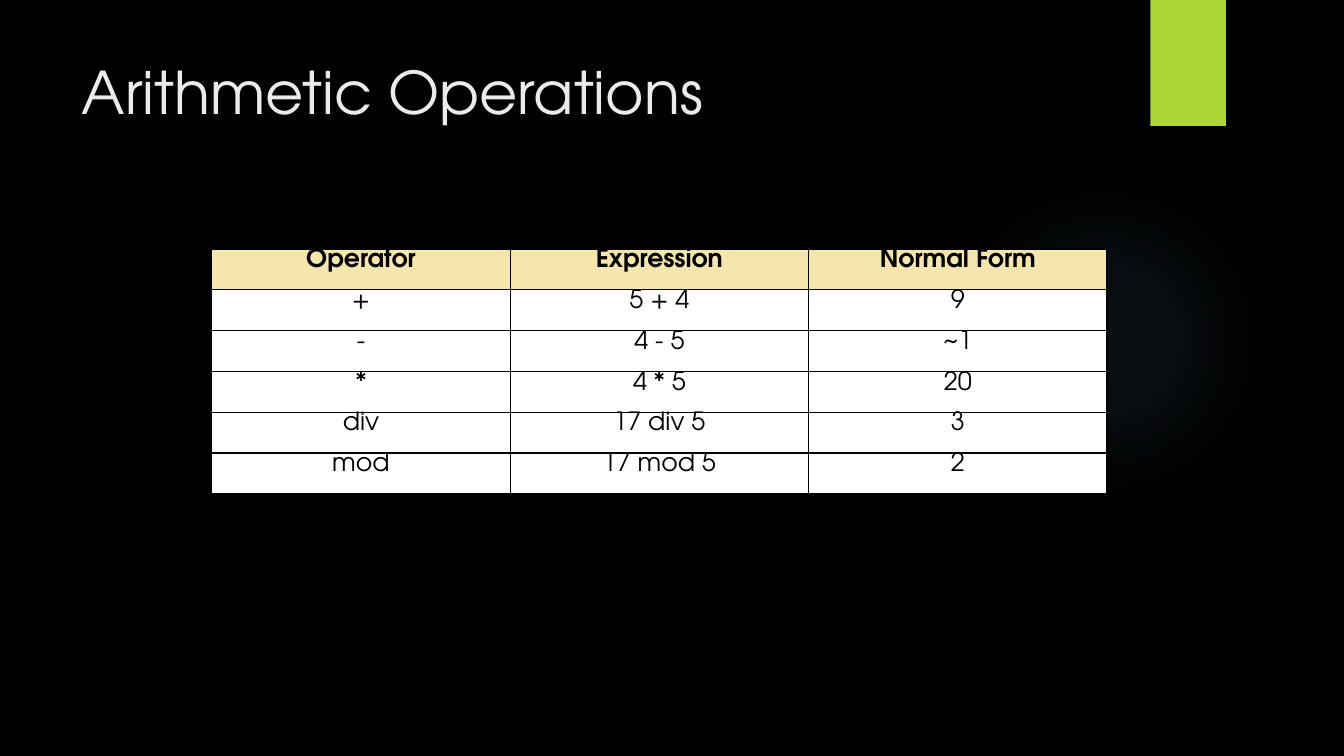
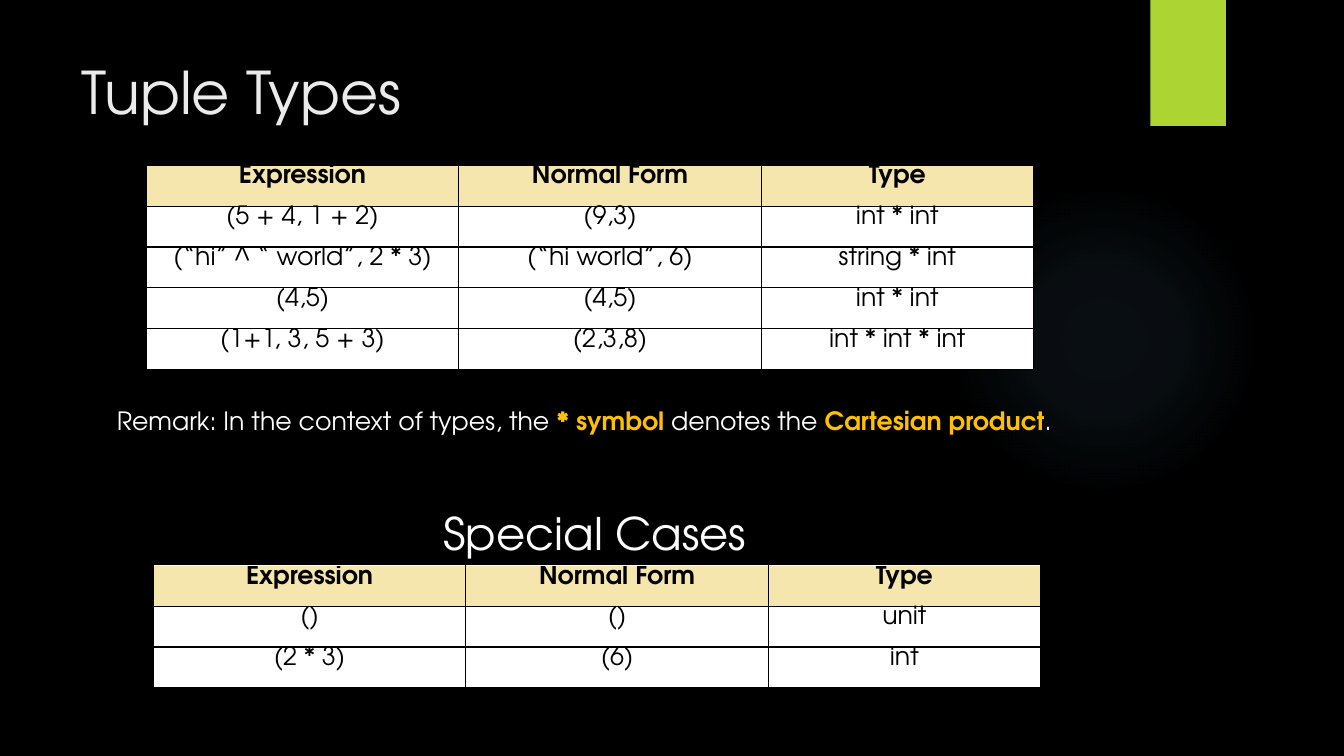
from dataclasses import dataclass

from lxml.etree import SubElement
from pptx import Presentation
from pptx.dml.color import RGBColor
from pptx.enum.shapes import MSO_SHAPE
from pptx.enum.text import MSO_ANCHOR, MSO_AUTO_SIZE, PP_ALIGN
from pptx.oxml import parse_xml
from pptx.oxml.ns import nsdecls, qn
from pptx.presentation import Presentation as Deck
from pptx.slide import Slide, SlideMaster
from pptx.table import _Cell
from pptx.text.text import _Paragraph
from pptx.util import Inches, Pt


@dataclass(frozen=True)
class Theme:
    font: str = "TeX Gyre Adventor"
    background: str = "000000"
    glow: str = "7AC4F0"
    accent: str = "ACD433"
    title: str = "EBEBEB"
    light: str = "FFFFFF"
    dark: str = "000000"
    highlight: str = "FFC000"
    header_fill: str = "F5E6AD"
    cell_fill: str = "FFFFFF"
    title_size: int = 42
    heading_size: int = 32
    body_size: int = 18


THEME = Theme()


@dataclass(frozen=True)
class Span:
    text: str
    color: str = THEME.light
    bold: bool = False


@dataclass(frozen=True)
class Note:
    left: float
    top: float
    width: float
    height: float
    size: int
    spans: tuple[Span, ...]


@dataclass(frozen=True)
class Grid:
    left: float
    top: float
    columns: tuple[float, ...]
    rows: tuple[tuple[str, ...], ...]
    top_line: str = THEME.dark
    row_height: float = 0.405


@dataclass(frozen=True)
class Page:
    title: str
    grids: tuple[Grid, ...]
    notes: tuple[Note, ...] = ()


# Content
TUPLE_COLUMNS = (3.1, 3.0, 2.7)
TUPLE_HEADER = ("Expression", "Normal Form", "Type")

ARITHMETIC = Page(
    "Arithmetic Operations",
    (Grid(2.1, 2.47, (2.96,) * 3, (
        ("Operator", "Expression", "Normal Form"),
        ("+", "5 + 4", "9"),
        ("-", "4 - 5", "~1"),
        ("*", "4 * 5", "20"),
        ("div", "17 div 5", "3"),
        ("mod", "17 mod 5", "2"),
    )),),
)

TUPLES = Page(
    "Tuple Types",
    (
        Grid(1.45, 1.64, TUPLE_COLUMNS, (
            TUPLE_HEADER,
            ("(5 + 4, 1 + 2)", "(9,3)", "int * int"),
            ("(“hi” ^ “ world”, 2 * 3)", "(“hi world”, 6)", "string * int"),
            ("(4,5)", "(4,5)", "int * int"),
            ("(1+1, 3, 5 + 3)", "(2,3,8)", "int * int * int"),
        )),
        Grid(1.52, 5.61, TUPLE_COLUMNS, (
            TUPLE_HEADER,
            ("()", "()", "unit"),
            ("(2 * 3)", "(6)", "int"),
        ), top_line=THEME.light),
    ),
    (
        Note(1.06, 3.97, 9.58, 0.4, THEME.body_size, (
            Span("Remark: In the context of types, the "),
            Span("* symbol", THEME.highlight, True),
            Span(" denotes the "),
            Span("Cartesian product", THEME.highlight, True),
            Span("."),
        )),
        Note(4.3, 4.97, 3.23, 0.64, THEME.heading_size, (Span("Special Cases"),)),
    ),
)


def add_span(paragraph: _Paragraph, span: Span, size: int) -> None:
    run = paragraph.add_run()
    run.text = span.text
    run.font.name = THEME.font
    run.font.size = Pt(size)
    run.font.bold = span.bold
    run.font.color.rgb = RGBColor.from_string(span.color)


# Shared background, glow and corner bar
def decorate_master(master: SlideMaster, first_slide: Slide) -> None:
    master.background.fill.solid()
    master.background.fill.fore_color.rgb = RGBColor.from_string(THEME.background)

    shapes = first_slide.shapes
    glow = shapes.add_shape(
        MSO_SHAPE.OVAL, Inches(9.41), Inches(1.83), Inches(3.08), Inches(3.08))
    bar = shapes.add_shape(
        MSO_SHAPE.RECTANGLE, Inches(11.41), Inches(0), Inches(0.75), Inches(1.25))
    for shape in (glow, bar):
        shape.shadow.inherit = False
        shape.line.fill.background()

    # Radial fade of the glow
    stops = "".join(
        f'<a:gs pos="{position * 1000}"><a:srgbClr val="{THEME.glow}">'
        f'<a:alpha val="{alpha * 1000}"/></a:srgbClr></a:gs>'
        for position, alpha in ((0, 7), (36, 6), (69, 0)))
    glow.fill.background()
    properties = glow._element.spPr
    properties.replace(properties.find(qn("a:noFill")), parse_xml(
        f'<a:gradFill {nsdecls("a")}><a:gsLst>{stops}</a:gsLst><a:path path="circle">'
        '<a:fillToRect l="50000" t="50000" r="50000" b="50000"/></a:path></a:gradFill>'))

    # Solid bar with a soft shadow
    bar.fill.solid()
    bar.fill.fore_color.rgb = RGBColor.from_string(THEME.accent)
    bar._element.spPr.find(qn("a:effectLst")).append(parse_xml(
        f'<a:outerShdw {nsdecls("a")} blurRad="{Pt(3)}" dist="{Pt(2)}" dir="5400000">'
        f'<a:srgbClr val="{THEME.dark}"><a:alpha val="45000"/></a:srgbClr></a:outerShdw>'))

    # Behind the placeholders of every slide
    for position, shape in enumerate((glow, bar), start=2):
        master.shapes._spTree.insert(position, shape._element)


def set_title(slide: Slide, text: str) -> None:
    title = slide.shapes.title
    title.left, title.top = Inches(0.71), Inches(0.5)
    title.width, title.height = Inches(10.29), Inches(1.53)
    frame = title.text_frame
    frame.auto_size = MSO_AUTO_SIZE.NONE
    frame.vertical_anchor = MSO_ANCHOR.TOP
    frame.paragraphs[0].alignment = PP_ALIGN.LEFT
    add_span(frame.paragraphs[0], Span(text, THEME.title), THEME.title_size)


def set_borders(cell: _Cell, top_color: str) -> None:
    properties = cell._tc.get_or_add_tcPr()
    for position, side in enumerate("LRTB"):
        line = SubElement(properties, qn(f"a:ln{side}"), w=str(Pt(1)))
        color = top_color if side == "T" else THEME.dark
        SubElement(SubElement(line, qn("a:solidFill")), qn("a:srgbClr"), val=color)
        properties.insert(position, line)


def add_grid(slide: Slide, grid: Grid) -> None:
    table = slide.shapes.add_table(
        len(grid.rows), len(grid.columns), Inches(grid.left), Inches(grid.top),
        Inches(sum(grid.columns)), Inches(grid.row_height * len(grid.rows))).table
    table.horz_banding = False
    for column, width in zip(table.columns, grid.columns):
        column.width = Inches(width)
    for row_index, texts in enumerate(grid.rows):
        is_header = row_index == 0
        fill = THEME.header_fill if is_header else THEME.cell_fill
        for column_index, text in enumerate(texts):
            cell = table.cell(row_index, column_index)
            cell.margin_top = cell.margin_bottom = 0
            cell.fill.solid()
            cell.fill.fore_color.rgb = RGBColor.from_string(fill)
            set_borders(cell, grid.top_line if is_header else THEME.dark)
            paragraph = cell.text_frame.paragraphs[0]
            paragraph.alignment = PP_ALIGN.CENTER
            add_span(paragraph, Span(text, THEME.dark, is_header), THEME.body_size)


def add_note(slide: Slide, note: Note) -> None:
    frame = slide.shapes.add_textbox(
        Inches(note.left), Inches(note.top),
        Inches(note.width), Inches(note.height)).text_frame
    frame.word_wrap = False
    frame.auto_size = MSO_AUTO_SIZE.SHAPE_TO_FIT_TEXT
    for span in note.spans:
        add_span(frame.paragraphs[0], span, note.size)


def add_page(deck: Deck, page: Page) -> Slide:
    slide = deck.slides.add_slide(deck.slide_layouts.get_by_name("Title Only"))
    set_title(slide, page.title)
    for grid in page.grids:
        add_grid(slide, grid)
    for note in page.notes:
        add_note(slide, note)
    return slide


def main() -> None:
    deck = Presentation()
    deck.slide_width, deck.slide_height = Inches(13.33), Inches(7.5)
    slides = [add_page(deck, page) for page in (ARITHMETIC, TUPLES)]
    decorate_master(deck.slide_master, slides[0])
    deck.save("out.pptx")


if __name__ == "__main__":
    main()
